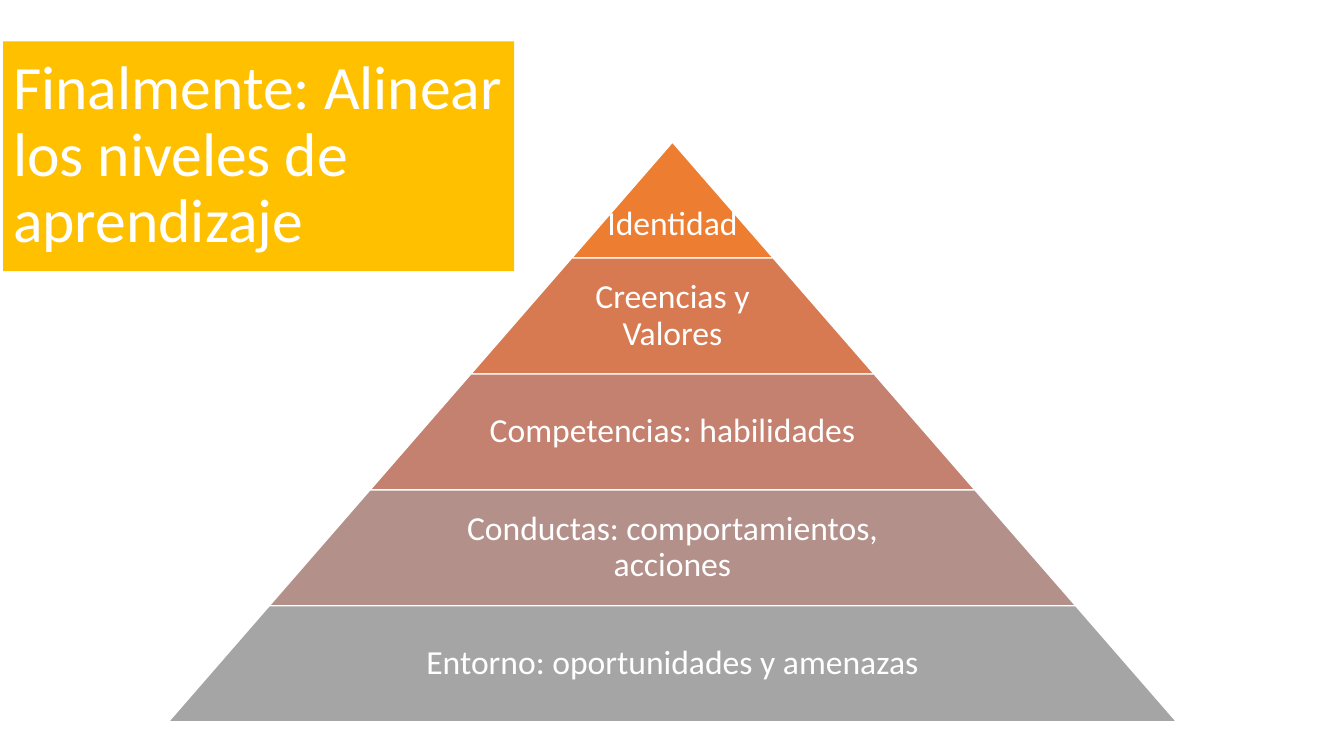
from pptx import Presentation
from pptx.dml.color import RGBColor
from pptx.enum import shapes, text
from pptx.util import Inches, Pt

TITLE = "Finalmente: Alinear los niveles de aprendizaje"
LEVELS = [  # label, fill, share of the tier's width for text, top inset
    ("Identidad", "ED7D31", 1, 0.52),
    ("Creencias y Valores", "D87A51", 0.65, 0.03),
    ("Competencias: habilidades", "C48170", 0.65, 0.03),
    ("Conductas: comportamientos, acciones", "B4908B", 0.65, 0.03),
    ("Entorno: oportunidades y amenazas", "A5A5A5", 0.65, 0.03),
]
THEME = {"font": "Calibri", "text": "FFFFFF", "title_fill": "FFC000",
         "title_size": 44, "level_size": 24}
CENTER, TOP, TIER_HEIGHT, SIDE_RUN, INSET = 6.67, 1.41, 1.15, 1, 0.03


def color(name):
    return RGBColor.from_string(name)


def write(shape, words, size, alignment, frame_format):
    frame = shape.text_frame
    frame.text = words
    settings = {"word_wrap": True, "auto_size": text.MSO_AUTO_SIZE.NONE,
                "vertical_anchor": text.MSO_ANCHOR.MIDDLE, **frame_format}
    for name, value in settings.items():
        setattr(frame, name, value)
    paragraph = frame.paragraphs[0]
    paragraph.alignment = alignment
    paragraph.line_spacing = 0.9
    font = paragraph.runs[0].font
    font.name, font.size = THEME["font"], Pt(size)
    font.color.rgb = color(THEME["text"])


def add_title(slide):
    title = slide.shapes.title
    box = {"left": 0.03, "top": 0.41, "width": 5.07, "height": 2.28}
    for name, value in box.items():
        setattr(title, name, Inches(value))
    title.fill.solid()
    title.fill.fore_color.rgb = color(THEME["title_fill"])
    write(title, TITLE, THEME["title_size"], text.PP_ALIGN.LEFT, {})


def add_level(pyramid, index, label, fill, text_share, top_inset):
    width = 2 * SIDE_RUN * (index + 1)
    top = TOP + index * TIER_HEIGHT

    def centered(box_width):
        return [Inches(n) for n in
                (CENTER - box_width / 2, top, box_width, TIER_HEIGHT)]

    tier = pyramid.shapes.add_shape(shapes.MSO_SHAPE.TRAPEZOID, *centered(width))
    tier.adjustments[0] = SIDE_RUN / TIER_HEIGHT
    tier.shadow.inherit = False
    tier.fill.solid()
    tier.fill.fore_color.rgb = color(fill)
    tier.line.color.rgb = color(THEME["text"])
    tier.line.width = Pt(1)

    caption = pyramid.shapes.add_textbox(*centered(width * text_share))
    insets = {f"margin_{side}": Inches(INSET) for side in ("left", "right", "bottom")}
    insets["margin_top"] = Inches(top_inset)
    write(caption, label, THEME["level_size"], text.PP_ALIGN.CENTER, insets)


def main():
    presentation = Presentation()
    presentation.slide_width, presentation.slide_height = Inches(13.33), Inches(7.5)
    slide = presentation.slides.add_slide(presentation.slide_layouts[5])
    add_title(slide)
    pyramid = slide.shapes.add_group_shape()
    for index, level in enumerate(LEVELS):
        add_level(pyramid, index, *level)
    presentation.save("out.pptx")


if __name__ == "__main__":
    main()
